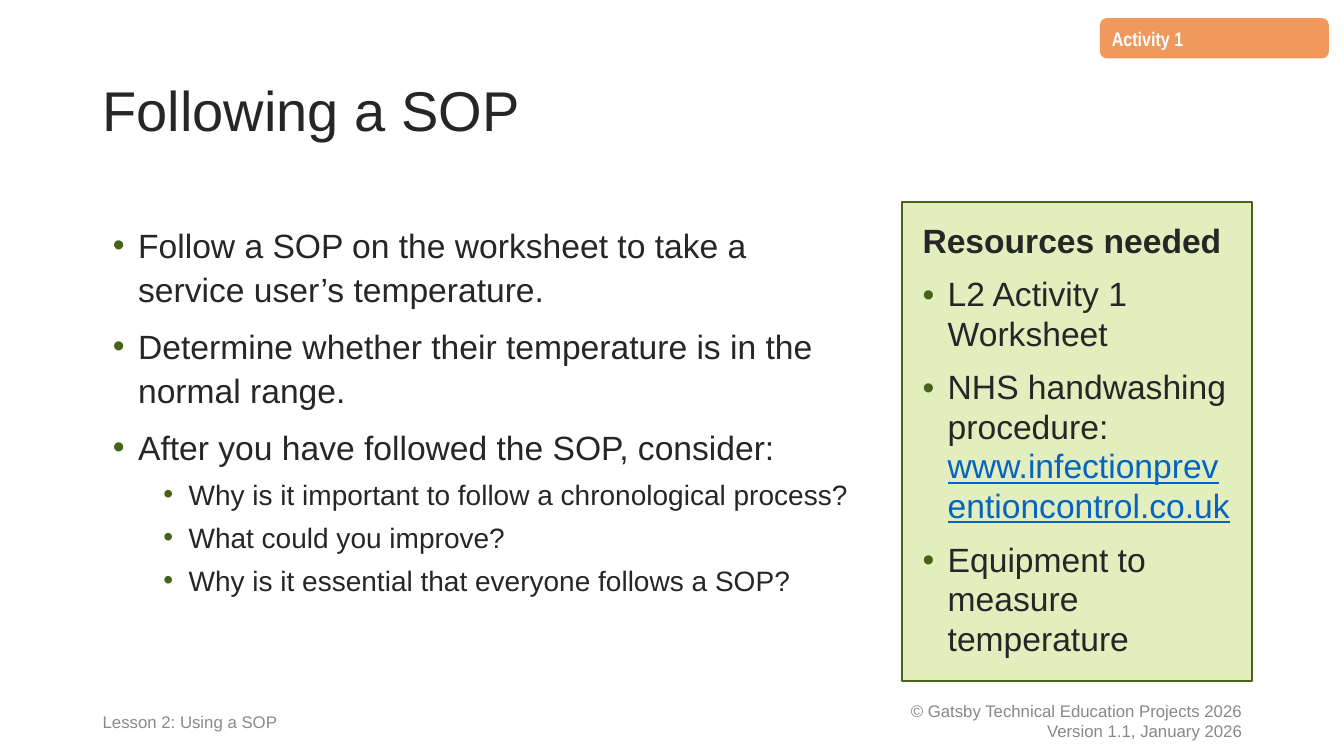
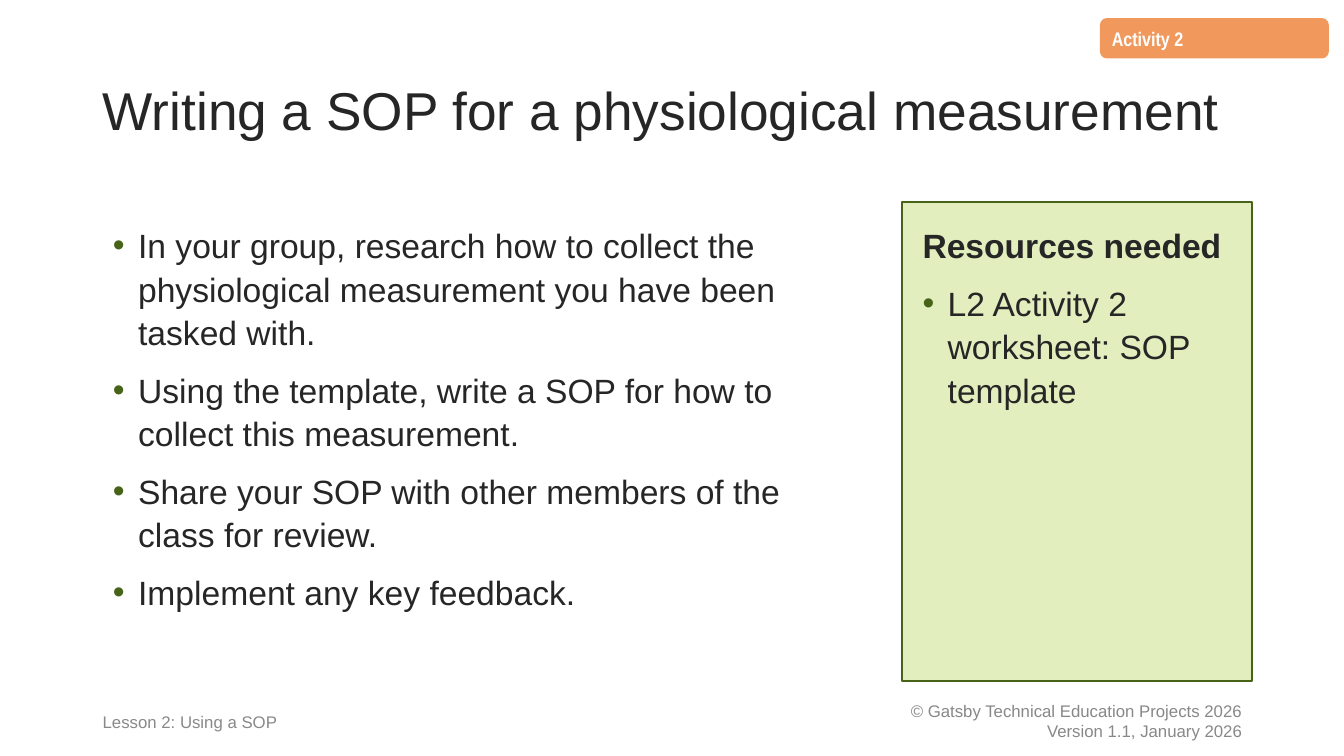
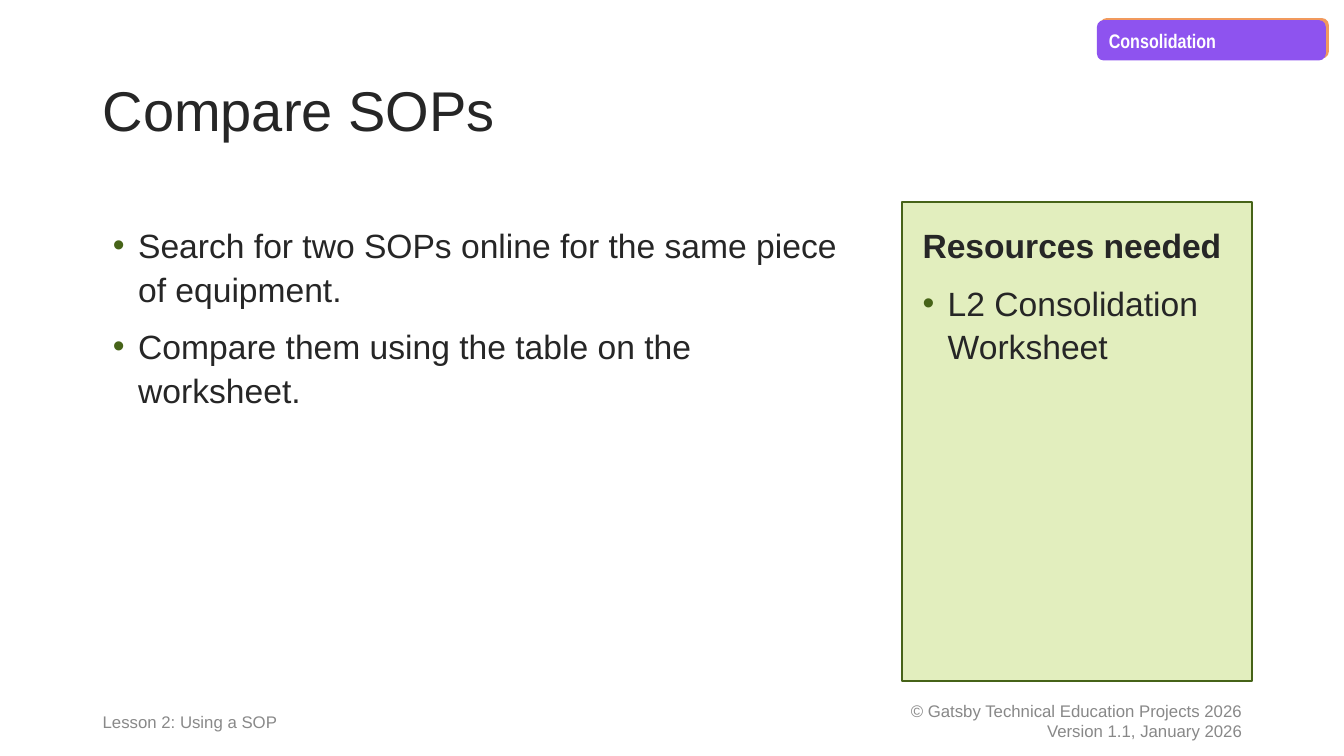
from dataclasses import dataclass

from lxml import etree
from pptx import Presentation
from pptx import util as u
from pptx.dml.color import RGBColor
from pptx.enum import shapes, text
from pptx.oxml import ns


@dataclass(frozen=True)
class Theme:
    font: str = "Arial"
    tag_font: str = "Arial Narrow"
    ink: str = "262626"
    white: str = "FFFFFF"
    green: str = "466318"
    pale_green: str = "E2EEBE"
    orange: str = "F1995D"
    purple: str = "8E53EF"
    link: str = "0563C1"
    lesson_grey: str = "898989"
    copyright_grey: str = "888888"
    title_size: int = 40
    body_size: int = 24
    sub_size: int = 20
    tag_size: int = 14
    footer_size: int = 12
    spacing: float = 1.08
    title_spacing: float = 0.9


THEME = Theme()
RECTANGLE = shapes.MSO_SHAPE.RECTANGLE
TAG_SHAPE = shapes.MSO_SHAPE.FLOWCHART_ALTERNATE_PROCESS
LEFT = 0.92
PANEL_TOP, PANEL_HEIGHT = 2, 4.76
FOOTER_TOP, FOOTER_HEIGHT = 6.95, 0.4


def set_values(target, values):
    for name, value in values.items():
        setattr(target, name, value)


class Deck:
    """Holds the theme, the presentation and the slide being filled."""

    def __init__(self, theme):
        self.theme = theme
        self.presentation = Presentation()
        set_values(self.presentation, {"slide_width": u.Inches(13.33),
                                       "slide_height": u.Inches(7.5)})
        self.slide = None

    def new_slide(self):
        self.slide = self.presentation.slides.add_slide(self.presentation.slide_layouts[6])

    def frame(self, shape, inset=(0.1, 0.05), anchor=text.MSO_ANCHOR.TOP):
        across, down = (u.Inches(side) for side in inset)
        set_values(shape.text_frame, {
            "word_wrap": True, "auto_size": text.MSO_AUTO_SIZE.NONE,
            "vertical_anchor": anchor, "margin_left": across, "margin_right": across,
            "margin_top": down, "margin_bottom": down})
        return shape.text_frame

    def box(self, kind, place, fill, line=None, inset=(0.1, 0.05)):
        shape = self.slide.shapes.add_shape(kind, *map(u.Inches, place))
        shape.shadow.inherit = False
        shape.fill.solid()
        shape.fill.fore_color.rgb = RGBColor.from_string(fill)
        if line:
            shape.line.color.rgb = RGBColor.from_string(line)
            shape.line.width = u.Pt(1.5)
        else:
            shape.line.fill.background()
        return self.frame(shape, inset)

    def text_box(self, place):
        shape = self.slide.shapes.add_textbox(*map(u.Inches, place))
        return self.frame(shape, anchor=text.MSO_ANCHOR.MIDDLE)

    def paragraph(self, frame, spacing=None, before=0, align=text.PP_ALIGN.LEFT, indent=None):
        """Return the next paragraph; an indent in inches makes it a bullet."""
        first = frame.paragraphs[0]
        paragraph = frame.add_paragraph() if first.runs else first
        if indent is not None:
            properties = paragraph._p.get_or_add_pPr()
            properties.set("marL", str(u.Inches(indent)))
            properties.set("indent", str(-u.Inches(0.25)))
            color = etree.SubElement(properties, ns.qn("a:buClr"))
            etree.SubElement(color, ns.qn("a:srgbClr"), val=self.theme.green)
            etree.SubElement(properties, ns.qn("a:buFont"), typeface=self.theme.font)
            etree.SubElement(properties, ns.qn("a:buChar"), char="•")
        set_values(paragraph, {"alignment": align, "line_spacing": spacing,
                               "space_before": u.Pt(before)})
        return paragraph

    def run(self, paragraph, words, size, color=None, font=None, **values):
        run = paragraph.add_run()
        run.text = words
        run.font.color.rgb = RGBColor.from_string(color or self.theme.ink)
        set_values(run.font, {"name": font or self.theme.font, "size": u.Pt(size), **values})

    def footers(self):
        theme = self.theme
        frame = self.text_box((7.92, FOOTER_TOP, 4.5, FOOTER_HEIGHT))
        for words in ("© Gatsby Technical Education Projects 2026",
                      "Version 1.1, January 2026"):
            paragraph = self.paragraph(frame, align=text.PP_ALIGN.RIGHT)
            self.run(paragraph, words, theme.footer_size, theme.copyright_grey)
        frame = self.text_box((LEFT, FOOTER_TOP, 4.6, FOOTER_HEIGHT))
        self.run(self.paragraph(frame, theme.spacing), "Lesson 2: Using a SOP",
                 theme.footer_size, theme.lesson_grey)

    def tag(self, words, left=10.91, top=0.18, fill=THEME.orange):
        theme = self.theme
        frame = self.box(TAG_SHAPE, (left, top, 2.27, 0.4), fill)
        if words:
            self.run(self.paragraph(frame, theme.spacing), words, theme.tag_size,
                     theme.white, theme.tag_font, bold=True)

    def title(self, words, size):
        frame = self.text_box((LEFT, 0.4, 11.5, 1.45))
        self.run(self.paragraph(frame, self.theme.title_spacing), words, size)

    def tasks(self, items):
        """Bullets on the left; a tuple holds the sub-bullets of the item before."""
        theme = self.theme
        frame = self.box(RECTANGLE, (LEFT, PANEL_TOP, 7.75, PANEL_HEIGHT), theme.white,
                         inset=(0.2, 0.2))
        for index, item in enumerate(items):
            if isinstance(item, tuple):
                lines, size, indent, before = item, theme.sub_size, 0.75, 5
            else:
                lines, size, indent, before = (item,), theme.body_size, 0.25, 10
            for words in lines:
                paragraph = self.paragraph(frame, theme.spacing, before if index else 0,
                                           indent=indent)
                self.run(paragraph, words, size)

    def resources(self, items, spacing):
        """Green panel; a tuple is an item followed by a web address."""
        theme = self.theme
        frame = self.box(RECTANGLE, (8.95, PANEL_TOP, 3.47, PANEL_HEIGHT), theme.pale_green,
                         theme.green, inset=(0.2, 0.2))
        self.run(self.paragraph(frame, spacing), "Resources needed", theme.body_size, bold=True)
        for item in items:
            words, *addresses = item if isinstance(item, tuple) else (item,)
            paragraph = self.paragraph(frame, spacing, 10, indent=0.25)
            self.run(paragraph, words, theme.body_size)
            for address in addresses:
                self.run(paragraph, address, theme.body_size, theme.link, underline=True)

    def activity(self, title, tag, tasks, resources, title_size=THEME.title_size,
                 resource_spacing=THEME.spacing):
        self.new_slide()
        self.footers()
        self.tag(tag)
        self.title(title, title_size)
        self.tasks(tasks)
        self.resources(resources, resource_spacing)


def main():
    deck = Deck(THEME)
    deck.activity(
        "Following a SOP", "Activity 1",
        ["Follow a SOP on the worksheet to take a service user’s temperature.",
         "Determine whether their temperature is in the normal range.",
         "After you have followed the SOP, consider:",
         ("Why is it important to follow a chronological process?",
          "What could you improve?",
          "Why is it essential that everyone follows a SOP?")],
        ["L2 Activity 1 Worksheet",
         ("NHS handwashing procedure: ", "www.infectionpreventioncontrol.co.uk"),
         "Equipment to measure temperature"],
        resource_spacing=0.98)
    deck.activity(
        "Writing a SOP for a physiological measurement", "Activity 2",
        ["In your group, research how to collect the physiological measurement "
         "you have been tasked with.",
         "Using the template, write a SOP for how to collect this measurement.",
         "Share your SOP with other members of the class for review.",
         "Implement any key feedback."],
        ["L2 Activity 2 worksheet: SOP template"],
        title_size=38)
    deck.activity(
        "Compare SOPs", None,
        ["Search for two SOPs online for the same piece of equipment.",
         "Compare them using the table on the worksheet."],
        ["L2 Consolidation Worksheet"])
    deck.tag("Consolidation", 10.88, 0.2, THEME.purple)
    deck.presentation.save("out.pptx")


if __name__ == "__main__":
    main()
